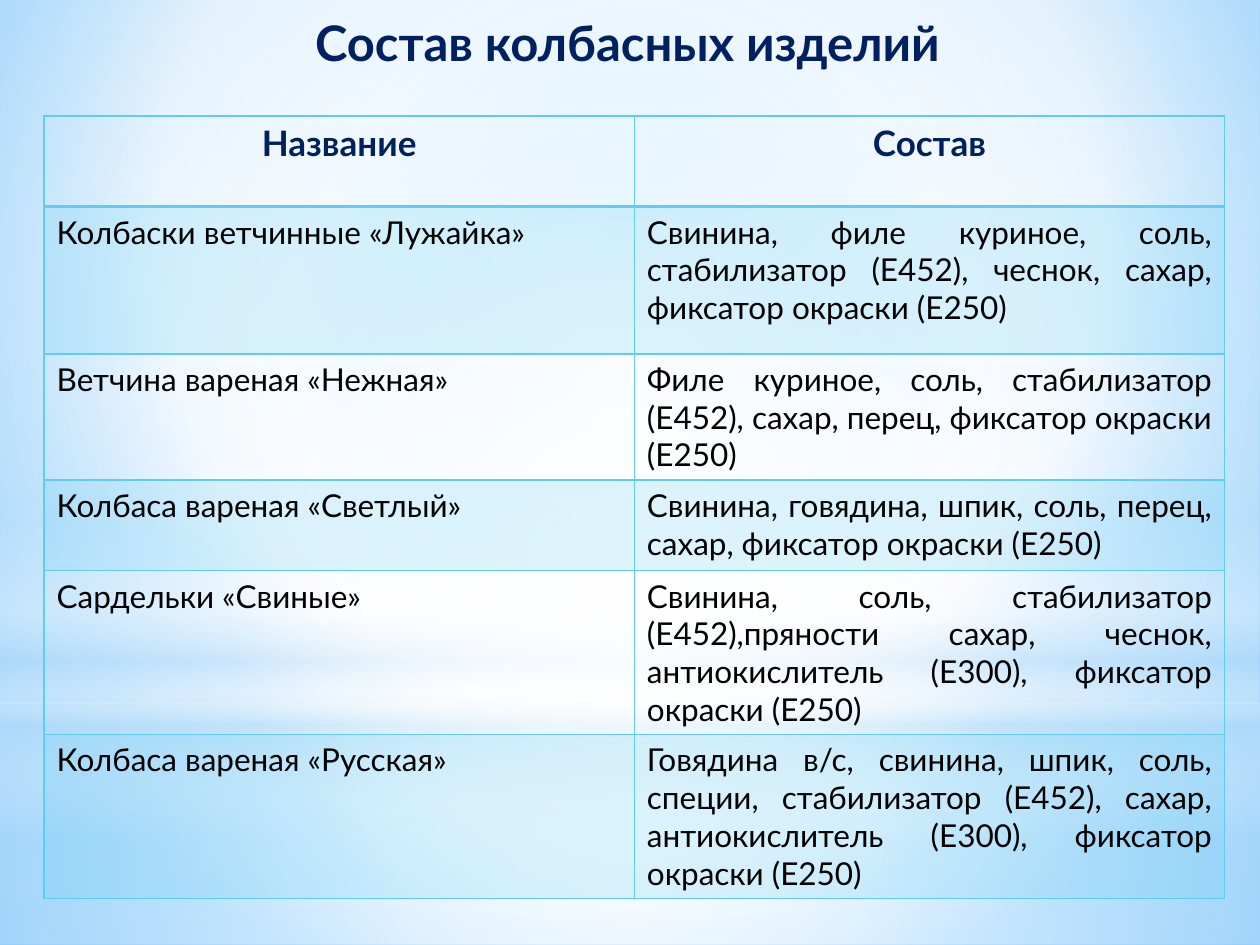
from typing import NamedTuple

from lxml.etree import SubElement
from pptx import Presentation
from pptx.dml.color import RGBColor
from pptx.enum.shapes import MSO_SHAPE
from pptx.enum.text import MSO_ANCHOR, PP_ALIGN
from pptx.oxml.ns import qn
from pptx.util import Inches, Pt

WIDTH, HEIGHT = Inches(10), Inches(7.5)
FONT = "Lato"
NAVY = RGBColor(0x00, 0x20, 0x60)
BLACK = RGBColor(0x00, 0x00, 0x00)
WHITE = RGBColor(0xFF, 0xFF, 0xFF)
AQUA = RGBColor(0x5E, 0xCC, 0xF3)
MIST = RGBColor(0xB4, 0xDC, 0xFA)
SKY = RGBColor(0x9E, 0xD5, 0xFF)
AZURE = RGBColor(0x5B, 0xB9, 0xFF)
NO_STYLE = "{2D5ABB26-0587-4C30-8999-92F81FD0307C}"
BAND_OPACITY = 20


class Stop(NamedTuple):
    position: int
    color: RGBColor
    opacity: int = 100


class Glow(NamedTuple):
    """A soft full-width layer; top and height are shares of the slide."""
    kind: MSO_SHAPE
    top: float
    height: float
    stops: list[Stop]
    angle: int | None = None


class Product(NamedTuple):
    name: str
    ingredients: str
    height: float


CENTER = (50, 50, 50, 50)
BACKGROUND = [Stop(0, SKY), Stop(60, WHITE), Stop(100, AZURE)]
GLOWS = [
    Glow(MSO_SHAPE.RECTANGLE, 0.744, 0.256,
         [Stop(0, WHITE, 91), Stop(37, WHITE, 76), Stop(100, MIST, 79)]),
    Glow(MSO_SHAPE.RECTANGLE, 0, 0.744,
         [Stop(0, WHITE, 89), Stop(48, WHITE, 62), Stop(100, MIST, 79)]),
    Glow(MSO_SHAPE.RECTANGLE, 0.55, 0.333,
         [Stop(0, WHITE, 0), Stop(29, WHITE, 30), Stop(45, MIST, 40),
          Stop(55, WHITE, 26), Stop(65, MIST, 60), Stop(100, WHITE, 0)], 90),
    Glow(MSO_SHAPE.OVAL, 0.233, 0.744, [Stop(0, WHITE), Stop(56, WHITE, 0)]),
]

HEADINGS = Product("Название", "Состав", 0.72)
PRODUCTS = [
    Product("Колбаски ветчинные «Лужайка»",
            "Свинина, филе куриное, соль, стабилизатор (Е452), чеснок, сахар, "
            "фиксатор окраски (Е250)", 1.17),
    Product("Ветчина вареная «Нежная»",
            "Филе куриное, соль, стабилизатор (Е452), сахар, перец, "
            "фиксатор окраски (Е250)", 1),
    Product("Колбаса вареная «Светлый»",
            "Свинина, говядина, шпик, соль, перец, сахар, "
            "фиксатор окраски (Е250)", 0.72),
    Product("Сардельки «Свиные»",
            "Свинина, соль, стабилизатор (Е452),пряности сахар, чеснок, "
            "антиокислитель (Е300), фиксатор окраски (Е250)", 1.3),
    Product("Колбаса вареная «Русская»",
            "Говядина в/с, свинина, шпик, соль, специи, стабилизатор (Е452), "
            "сахар, антиокислитель (Е300), фиксатор окраски (Е250)", 1.3),
]

TITLE_FORMAT = {"name": FONT, "size": Pt(28), "bold": True}
HEADING_FORMAT = {"name": FONT, "size": Pt(20), "bold": True}
BODY_FORMAT = {"name": FONT, "size": Pt(18), "bold": False}


def add_color(parent, color: RGBColor, opacity: int = 100) -> None:
    element = SubElement(parent, qn("a:srgbClr"), val=str(color))
    if opacity < 100:
        SubElement(element, qn("a:alpha"), val=str(opacity * 1000))


def set_gradient(parent, stops: list[Stop], focus=CENTER, angle=None) -> None:
    """Turn the solid fill inside parent into a gradient."""
    gradient = parent.find(qn("a:solidFill"))
    gradient.clear()
    gradient.tag = qn("a:gradFill")
    gradient.set("rotWithShape", "1")
    stop_list = SubElement(gradient, qn("a:gsLst"))
    for stop in stops:
        element = SubElement(stop_list, qn("a:gs"), pos=str(stop.position * 1000))
        add_color(element, stop.color, stop.opacity)
    if angle is not None:
        SubElement(gradient, qn("a:lin"), ang=str(angle * 60000), scaled="0")
        return
    radial = SubElement(gradient, qn("a:path"), attrib={"path": "circle"})
    sides = {side: str(share * 1000) for side, share in zip("ltrb", focus)}
    SubElement(radial, qn("a:fillToRect"), attrib=sides)


def add_glow(slide, glow: Glow) -> None:
    shape = slide.shapes.add_shape(glow.kind, 0, int(HEIGHT * glow.top),
                                   WIDTH, int(HEIGHT * glow.height))
    shape.shadow.inherit = False
    shape.line.fill.background()
    shape.fill.solid()
    set_gradient(shape._element.spPr, glow.stops, angle=glow.angle)


def write(text_frame, text: str, formats: dict, color: RGBColor, alignment) -> None:
    paragraph = text_frame.paragraphs[0]
    paragraph.alignment = alignment
    run = paragraph.add_run()
    run.text = text
    for name, value in formats.items():
        setattr(run.font, name, value)
    run.font.color.rgb = color


def style_cell(cell, row: int) -> None:
    """Draw the borders, then tint every other body row."""
    properties = cell._tc.get_or_add_tcPr()
    widths = {"L": 1, "R": 1, "T": 2 if row == 1 else 1, "B": 2 if row == 0 else 1}
    for side, width in widths.items():
        line = SubElement(properties, qn(f"a:ln{side}"), w=str(Pt(width)))
        add_color(SubElement(line, qn("a:solidFill")), AQUA)
    if row % 2:
        add_color(SubElement(properties, qn("a:solidFill")), AQUA, BAND_OPACITY)
    else:
        cell.fill.background()


def add_product_table(slide) -> None:
    rows = [HEADINGS, *PRODUCTS]
    total = sum(row.height for row in rows)
    frame = slide.shapes.add_table(len(rows), 2, Inches(0.35), Inches(0.92),
                                   Inches(9.37), Inches(total))
    table = frame.table
    table._tbl.tblPr.find(qn("a:tableStyleId")).text = NO_STYLE
    for index, product in enumerate(rows):
        table.rows[index].height = Inches(product.height)
        if index == 0:
            formats, color, alignments = HEADING_FORMAT, NAVY, [PP_ALIGN.CENTER] * 2
        else:
            formats, color = BODY_FORMAT, BLACK
            alignments = [PP_ALIGN.LEFT, PP_ALIGN.JUSTIFY]
        texts = (product.name, product.ingredients)
        for column, (text, alignment) in enumerate(zip(texts, alignments)):
            cell = table.cell(index, column)
            write(cell.text_frame, text, formats, color, alignment)
            style_cell(cell, index)


def place_title(slide, text: str) -> None:
    title = slide.shapes.title
    title.left, title.top = Inches(2.4), Inches(0.05)
    title.width, title.height = Inches(5.39), Inches(0.57)
    title.text_frame.vertical_anchor = MSO_ANCHOR.TOP
    title.text_frame.word_wrap = True
    write(title.text_frame, text, TITLE_FORMAT, NAVY, PP_ALIGN.LEFT)
    # Bring the title in front of the glows
    slide.shapes._spTree.append(title._element)


def main() -> None:
    presentation = Presentation()
    presentation.slide_width, presentation.slide_height = WIDTH, HEIGHT
    slide = presentation.slides.add_slide(presentation.slide_layouts[5])

    # Backdrop
    slide.background.fill.solid()
    background = slide._element.find(".//" + qn("p:bgPr"))
    set_gradient(background, BACKGROUND, focus=(20, 10, 20, 60))
    for glow in GLOWS:
        add_glow(slide, glow)

    # Content
    place_title(slide, "Состав колбасных изделий")
    add_product_table(slide)
    presentation.save("out.pptx")


if __name__ == "__main__":
    main()
